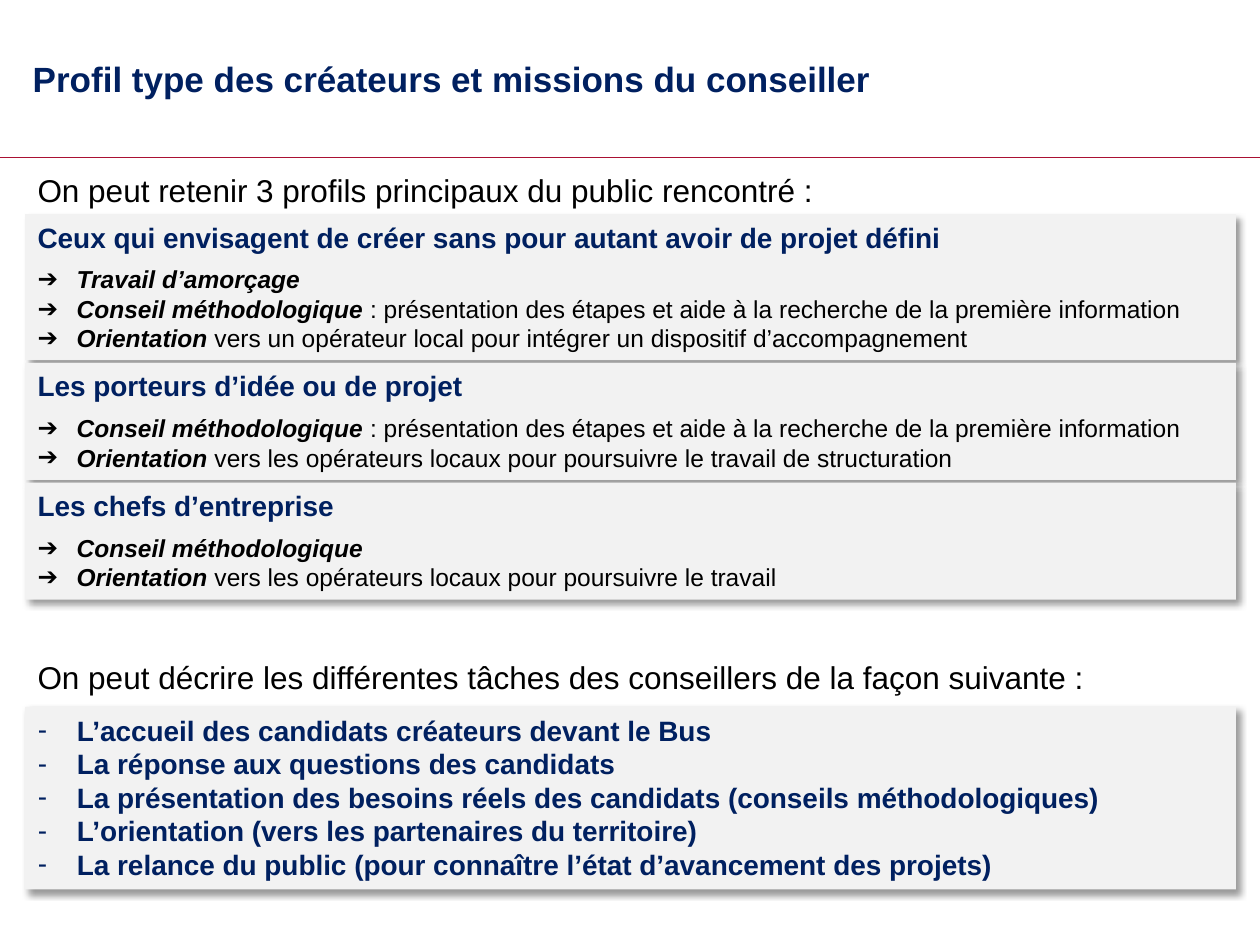
from pptx import Presentation
from pptx.dml.color import RGBColor
from pptx.enum.shapes import MSO_CONNECTOR, MSO_SHAPE
from pptx.enum.text import MSO_ANCHOR, MSO_AUTO_SIZE, PP_ALIGN
from pptx.oxml.ns import qn
from pptx.util import Inches, Pt
from lxml.etree import SubElement

# Content
TITLE = "Profil type des créateurs et missions du conseiller"
PROFILES_INTRO = "On peut retenir 3 profils principaux du public rencontré :"
METHOD = ("Conseil méthodologique ",
          ": présentation des étapes et aide à la recherche de la première information")
PROFILES = [  # heading, then (emphasis, detail) for each mission
    ("Ceux qui envisagent de créer sans pour autant avoir de projet défini", [
        ("Travail d’amorçage", ""),
        METHOD,
        ("Orientation ", "vers un opérateur local pour intégrer un dispositif d’accompagnement"),
    ]),
    ("Les porteurs d’idée ou de projet", [
        METHOD,
        ("Orientation ", "vers les opérateurs locaux pour poursuivre le travail de structuration"),
    ]),
    ("Les chefs d’entreprise", [
        ("Conseil méthodologique", ""),
        ("Orientation ", "vers les opérateurs locaux pour poursuivre le travail"),
    ]),
]
TASKS_INTRO = "On peut décrire les différentes tâches des conseillers de la façon suivante :"
TASKS = [
    "L’accueil des candidats créateurs devant le Bus",
    "La réponse aux questions des candidats",
    "La présentation des besoins réels des candidats (conseils méthodologiques)",
    "L’orientation (vers les partenaires du territoire)",
    "La relance du public (pour connaître l’état d’avancement des projets)",
]

THEME = {
    "font": "Arial",
    "navy": RGBColor(0x00, 0x20, 0x60),
    "black": RGBColor(0, 0, 0),
    "panel": RGBColor(0xF2, 0xF2, 0xF2),
    "rule": RGBColor(0xAA, 0x11, 0x33),
    "title": Pt(20), "intro": Pt(18), "heading": Pt(16), "item": Pt(14),
}

# Layout, in inches
LEFT, PANEL_WIDTH, INTRO_WIDTH = 0.2, 9.61, 9.53
PROFILES_TOP, PANEL_GAP = 1.7, 0.02
HEADING_HEIGHT, ITEM_HEIGHT = 0.47, 0.23
HANG = 0.31


def place(part, left, top, width, height):
    part.left, part.top = Inches(left), Inches(top)
    part.width, part.height = Inches(width), Inches(height)


def style(font, size, color, bold=False, italic=False):
    font.name, font.size = THEME["font"], THEME[size]
    font.color.rgb = THEME[color]
    font.bold, font.italic = bold, italic


def add_bullet(paragraph, char):
    props = paragraph._p.get_or_add_pPr()
    props.set("marL", str(Inches(HANG)))
    props.set("indent", str(-Inches(HANG)))
    SubElement(props, qn("a:buFont"), typeface=THEME["font"])
    SubElement(props, qn("a:buChar"), char=char)


def format_panel(panel):
    """Grey fill, no outline, soft shadow, text from the top."""
    panel.fill.solid()
    panel.fill.fore_color.rgb = THEME["panel"]
    panel.line.fill.background()
    panel.shadow.inherit = False
    effects = panel._element.spPr.find(qn("a:effectLst"))
    shadow = SubElement(effects, qn("a:outerShdw"), blurRad=str(Pt(4)), dist=str(Pt(3)),
                        dir=str(45 * 60000), algn="tl", rotWithShape="0")
    color = SubElement(shadow, qn("a:srgbClr"), val=str(THEME["black"]))
    SubElement(color, qn("a:alpha"), val="40000")
    frame = panel.text_frame
    frame.word_wrap = True
    frame.auto_size = MSO_AUTO_SIZE.NONE
    frame.vertical_anchor = MSO_ANCHOR.TOP


def add_intro(slide, text, top):
    intro = slide.shapes.add_textbox(Inches(LEFT), Inches(top), Inches(INTRO_WIDTH), Inches(0.4))
    intro.text_frame.word_wrap = True
    intro.text_frame.text = text
    style(intro.text_frame.paragraphs[0].runs[0].font, "intro", "black")


def add_profile(slide, heading, missions, top, height):
    panel = slide.shapes.add_shape(MSO_SHAPE.RECTANGLE, Inches(LEFT), Inches(top),
                                   Inches(PANEL_WIDTH), Inches(height))
    format_panel(panel)
    frame = panel.text_frame
    frame.text = heading
    first = frame.paragraphs[0]
    first.alignment = PP_ALIGN.LEFT
    first.space_after = Pt(6)
    style(first.runs[0].font, "heading", "navy", bold=True)
    for emphasis, detail in missions:
        mission = frame.add_paragraph()
        mission.alignment = PP_ALIGN.LEFT
        add_bullet(mission, "➔")
        for text, strong in ((emphasis, True), (detail, False)):
            if text:
                run = mission.add_run()
                run.text = text
                style(run.font, "item", "black", bold=strong, italic=strong)


def main():
    prs = Presentation()
    prs.slide_width, prs.slide_height = Inches(10), Inches(7.5)
    slide = prs.slides.add_slide(prs.slide_layouts[1])

    # Title and rule
    title = slide.shapes.title
    place(title, 0.16, 0, 9.51, 1.25)
    title.text_frame.text = TITLE
    title.text_frame.vertical_anchor = MSO_ANCHOR.MIDDLE
    title.text_frame.paragraphs[0].alignment = PP_ALIGN.LEFT
    style(title.text_frame.paragraphs[0].runs[0].font, "title", "navy", bold=True)
    rule = slide.shapes.add_connector(MSO_CONNECTOR.STRAIGHT, 0, Inches(1.25),
                                      prs.slide_width, Inches(1.25))
    rule.line.color.rgb = THEME["rule"]
    rule.line.width = Pt(1)
    SubElement(rule._element.spPr, qn("a:effectLst"))

    # Profiles, stacked by their number of missions
    add_intro(slide, PROFILES_INTRO, 1.31)
    top = PROFILES_TOP
    for heading, missions in PROFILES:
        height = HEADING_HEIGHT + ITEM_HEIGHT * len(missions)
        add_profile(slide, heading, missions, top, height)
        top += height + PANEL_GAP

    # Adviser's tasks
    add_intro(slide, TASKS_INTRO, 5.17)
    tasks = slide.placeholders[1]
    place(tasks, LEFT, 5.61, PANEL_WIDTH, 1.45)
    format_panel(tasks)
    tasks.text_frame.text = "\n".join(TASKS)
    for task in tasks.text_frame.paragraphs:
        add_bullet(task, "-")
        task.space_before = Pt(0)
        style(task.runs[0].font, "heading", "navy", bold=True)

    prs.save("out.pptx")


if __name__ == "__main__":
    main()
